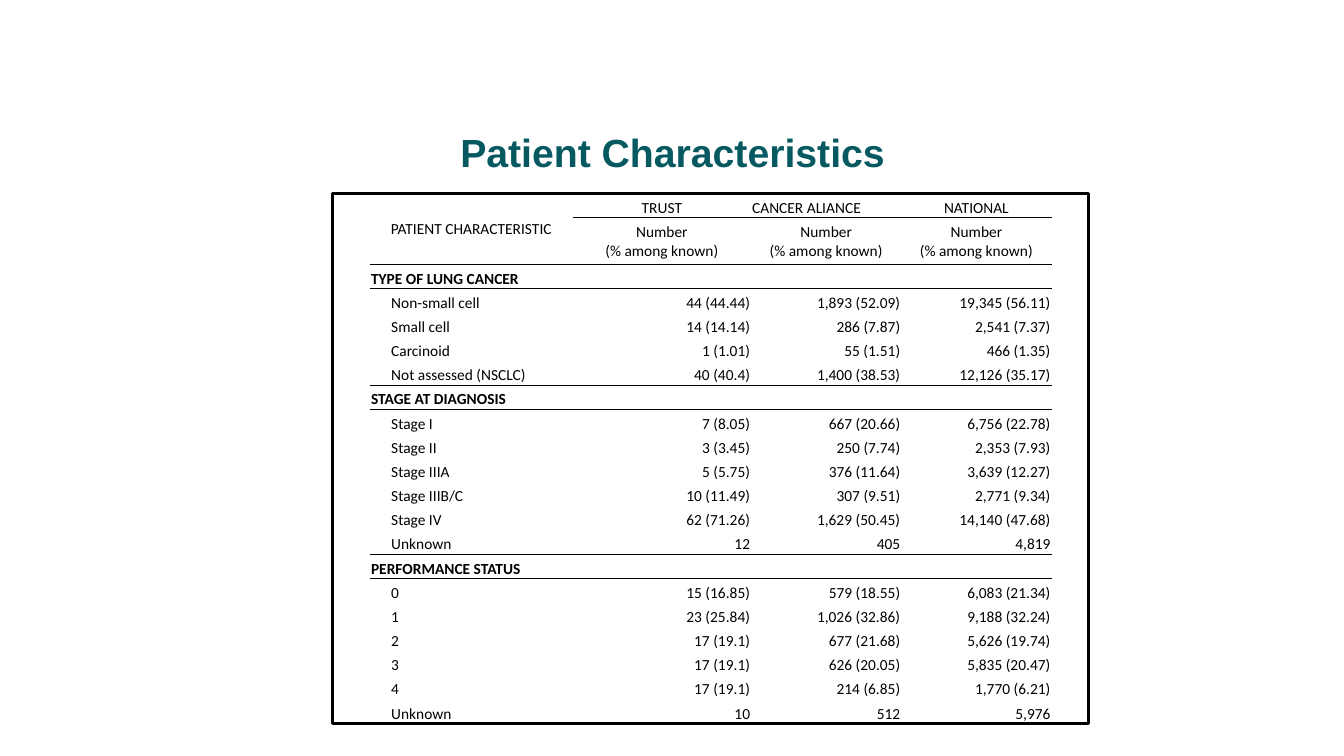
from lxml.etree import SubElement
from pptx import Presentation
from pptx.dml.color import RGBColor
from pptx.enum.shapes import MSO_SHAPE as Shape
from pptx.enum.text import MSO_ANCHOR as Anchor, PP_ALIGN as Align
from pptx.oxml.ns import qn
from pptx.util import Inches, Pt

TITLE = "Patient Characteristics"
ROW_LABEL = "PATIENT CHARACTERISTIC"
GROUPS = [("TRUST", Align.CENTER), ("CANCER ALIANCE", Align.LEFT), ("NATIONAL", Align.CENTER)]
MEASURE = "Number\v(% among known)"
SECTIONS = {
    "TYPE OF LUNG CANCER": [
        ("Non-small cell", "44 (44.44)", "1,893 (52.09)", "19,345 (56.11)"),
        ("Small cell", "14 (14.14)", "286 (7.87)", "2,541 (7.37)"),
        ("Carcinoid", "1 (1.01)", "55 (1.51)", "466 (1.35)"),
        ("Not assessed (NSCLC)", "40 (40.4)", "1,400 (38.53)", "12,126 (35.17)"),
    ],
    "STAGE AT DIAGNOSIS": [
        ("Stage I", "7 (8.05)", "667 (20.66)", "6,756 (22.78)"),
        ("Stage II", "3 (3.45)", "250 (7.74)", "2,353 (7.93)"),
        ("Stage IIIA", "5 (5.75)", "376 (11.64)", "3,639 (12.27)"),
        ("Stage IIIB/C", "10 (11.49)", "307 (9.51)", "2,771 (9.34)"),
        ("Stage IV", "62 (71.26)", "1,629 (50.45)", "14,140 (47.68)"),
        ("Unknown", "12", "405", "4,819"),
    ],
    "PERFORMANCE STATUS": [
        ("0", "15 (16.85)", "579 (18.55)", "6,083 (21.34)"),
        ("1", "23 (25.84)", "1,026 (32.86)", "9,188 (32.24)"),
        ("2", "17 (19.1)", "677 (21.68)", "5,626 (19.74)"),
        ("3", "17 (19.1)", "626 (20.05)", "5,835 (20.47)"),
        ("4", "17 (19.1)", "214 (6.85)", "1,770 (6.21)"),
        ("Unknown", "10", "512", "5,976"),
    ],
}
COLORS = {"title": "065960", "ink": "000000", "paper": "FFFFFF"}
COLUMN_WIDTHS = (2.01, 1.77, 1.49, 1.49)
ROW_HEIGHT, MEASURE_HEIGHT = 0.24, 0.46
TABLE_LEFT, TABLE_TOP, TABLE_HEIGHT = 3.67, 1.92, 5.26
NO_STYLE = "{2D5ABB26-0587-4C30-8999-92F81FD0307C}"


def color(name):
    return RGBColor.from_string(COLORS[name])


def style_font(para, name, size, ink, bold=False):
    para.font.name, para.font.size, para.font.bold = name, Pt(size), bold
    para.font.color.rgb = color(ink)


def add_title(slide):
    box = slide.shapes.add_textbox(Inches(0.57), Inches(1.33), Inches(12.2), Inches(0.85))
    frame = box.text_frame
    frame.word_wrap = True
    frame.margin_top = 0
    para = frame.paragraphs[0]
    para.text, para.alignment, para.line_spacing = TITLE, Align.CENTER, 0.9
    style_font(para, "Arial", 28, "title", bold=True)


def add_frame(slide):
    frame = slide.shapes.add_shape(
        Shape.RECTANGLE, Inches(3.3), Inches(TABLE_TOP), Inches(7.5), Inches(TABLE_HEIGHT))
    frame.shadow.inherit = False
    frame.fill.solid()
    frame.fill.fore_color.rgb = color("paper")
    frame.line.color.rgb = color("ink")
    frame.line.width = Pt(2.25)


def fill_cell(cell, text="", align=Align.LEFT, anchor=Anchor.BOTTOM, indent=0.01, bold=False):
    cell.margin_left, cell.margin_bottom = Inches(indent), 0
    cell.margin_top = cell.margin_right = Inches(0.01)
    cell.vertical_anchor = anchor
    cell.fill.background()
    para = cell.text_frame.paragraphs[0]
    para.text, para.alignment = text, align
    style_font(para, "Calibri", 11, "ink", bold)
    if not text:  # an empty cell takes its line height from the end mark
        SubElement(para._p, qn("a:endParaRPr"), sz="1100")


def add_rule(cell, *sides):
    """Draw a thin line on the given sides, in the order T, B."""
    properties = cell._tc.get_or_add_tcPr()
    for position, side in enumerate(sides):
        line = properties.makeelement(qn(f"a:ln{side}"), {"w": str(Pt(0.5))})
        fill = SubElement(line, qn("a:solidFill"))
        SubElement(fill, qn("a:srgbClr"), val=COLORS["ink"])
        properties.insert(position, line)


def fill_header(table):
    corner = table.cell(0, 0)
    corner.merge(table.cell(1, 0))
    fill_cell(corner, ROW_LABEL, Align.CENTER, Anchor.MIDDLE)
    add_rule(corner, "T", "B")
    add_rule(table.cell(1, 0), "B")
    for column, (group, align) in enumerate(GROUPS, start=1):
        fill_cell(table.cell(0, column), group, align)
        fill_cell(table.cell(1, column), MEASURE, Align.CENTER, Anchor.MIDDLE)
        for row in (0, 1):
            add_rule(table.cell(row, column), "T", "B")


def fill_sections(table):
    row = 2
    for heading, records in SECTIONS.items():
        for column in range(len(COLUMN_WIDTHS)):
            cell = table.cell(row, column)
            fill_cell(cell, "" if column else heading, bold=True)
            add_rule(cell, "T")
        for record in records:
            row += 1
            for column, text in enumerate(record):
                cell = table.cell(row, column)
                if column:
                    fill_cell(cell, text, Align.RIGHT)
                else:
                    fill_cell(cell, text, indent=0.21)
                if record is records[-1]:
                    add_rule(cell, "B")
        row += 1


def add_characteristics(slide):
    row_count = 2 + sum(1 + len(records) for records in SECTIONS.values())
    table = slide.shapes.add_table(
        row_count, len(COLUMN_WIDTHS), Inches(TABLE_LEFT), Inches(TABLE_TOP),
        Inches(sum(COLUMN_WIDTHS)), Inches(TABLE_HEIGHT)).table
    table.first_row = table.horz_banding = False
    table._tbl.tblPr.find(qn("a:tableStyleId")).text = NO_STYLE
    for column, width in zip(table.columns, COLUMN_WIDTHS):
        column.width = Inches(width)
    for index, row in enumerate(table.rows):
        row.height = Inches(MEASURE_HEIGHT if index == 1 else ROW_HEIGHT)
    fill_header(table)
    fill_sections(table)


def main():
    deck = Presentation()
    deck.slide_width, deck.slide_height = Inches(13.33), Inches(7.5)
    slide = deck.slides.add_slide(deck.slide_layouts[6])
    add_title(slide)
    add_frame(slide)
    add_characteristics(slide)
    deck.save("out.pptx")


if __name__ == "__main__":
    main()
